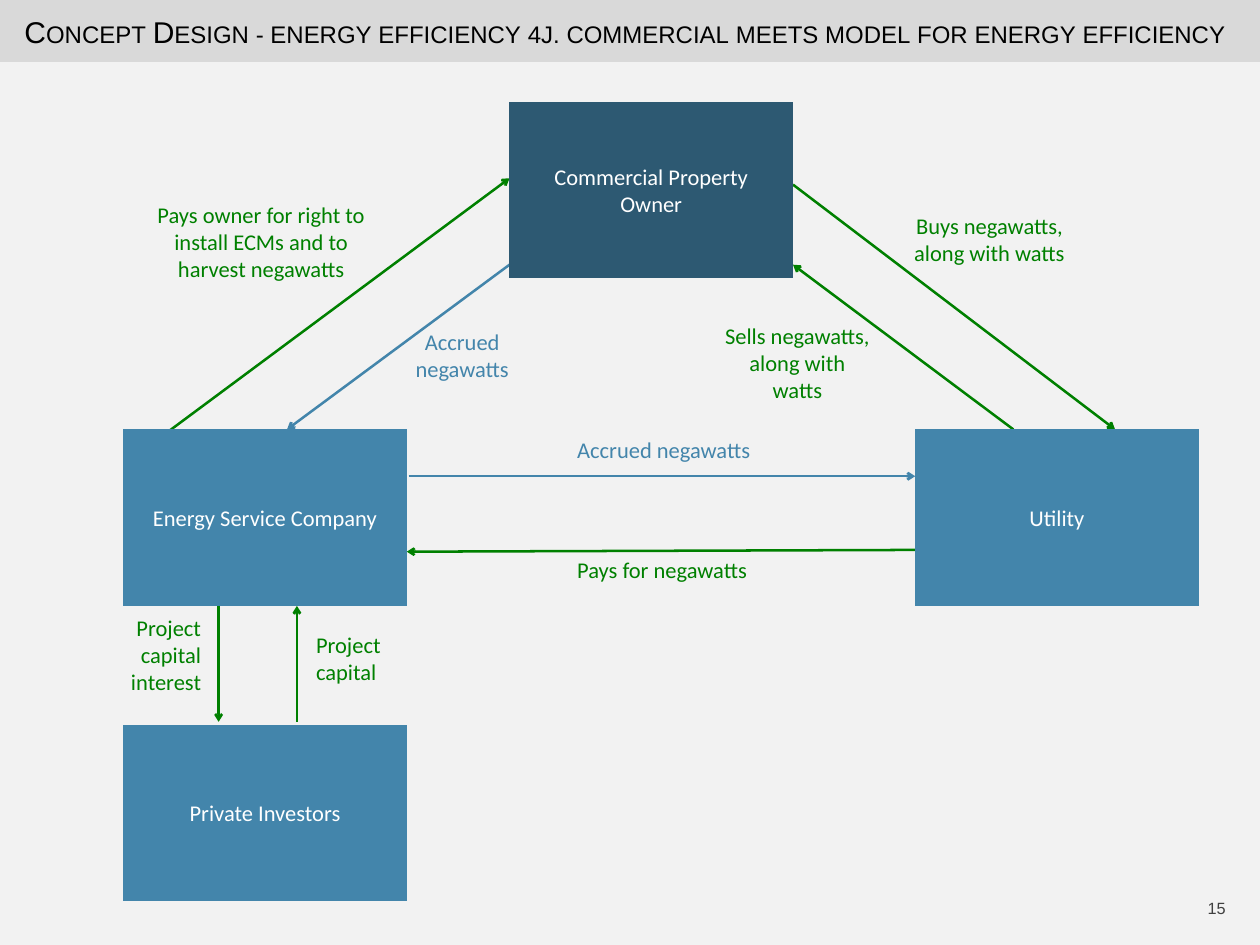
from lxml import etree
from pptx import Presentation
from pptx import util as u
from pptx.dml.color import RGBColor
from pptx.enum import shapes, text
from pptx.oxml import ns

GREEN, BLUE, NAVY = "008000", "4385AB", "2D5972"
BLACK, GREY, BAND, PAPER, WHITE = "000000", "404040", "D9D9D9", "F2F2F2", "FFFFFF"
LEFT, CENTER, RIGHT = text.PP_ALIGN.LEFT, text.PP_ALIGN.CENTER, text.PP_ALIGN.RIGHT
TOP, MIDDLE = text.MSO_ANCHOR.TOP, text.MSO_ANCHOR.MIDDLE


def color(value):
    return RGBColor.from_string(value)


def apply(target, values):
    for name, value in values.items():
        setattr(target, name, value)


class Diagram:
    """Holds the shared style and the current slide."""

    frame_style = {
        "margin_left": u.Cm(0.36), "margin_right": u.Cm(0.36),
        "margin_top": u.Cm(0.18), "margin_bottom": u.Cm(0.18),
        "auto_size": text.MSO_AUTO_SIZE.NONE,
    }

    def __init__(self, deck):
        self.page = deck.slides.add_slide(deck.slide_layouts[5])
        self.page.background.fill.solid()
        self.page.background.fill.fore_color.rgb = color(PAPER)

    def add_text(self, shape, lines, ink, align=CENTER, anchor=MIDDLE,
                 size=18, font="Calibri", wrap=True):
        frame = shape.text_frame
        apply(frame, {**self.frame_style, "vertical_anchor": anchor, "word_wrap": wrap})
        for index, line in enumerate(lines):
            para = frame.add_paragraph() if index else frame.paragraphs[0]
            apply(para, {"alignment": align, "space_before": u.Pt(0)})
            span = para.add_run()
            span.text = line
            apply(span.font, {"name": font, "size": u.Pt(size)})
            span.font.color.rgb = color(ink)

    def title(self, words):
        title = self.page.shapes.title
        band = self.rectangle(shapes.MSO_SHAPE.RECTANGLE, (0, 0, 35.56, 1.75), BAND)
        title.element.addprevious(band.element)
        apply(title, {"left": u.Cm(0.33), "top": u.Cm(0),
                      "width": u.Cm(34.72), "height": u.Cm(1.75)})
        self.add_text(title, [words], BLACK, LEFT, size=24, font="Arial")
        for props in title.element.iter(ns.qn("a:rPr")):
            props.set("cap", "small")

    def rectangle(self, kind, place, fill):
        box = self.page.shapes.add_shape(kind, *map(u.Cm, place))
        box.shadow.inherit = False
        box.fill.solid()
        box.fill.fore_color.rgb = color(fill)
        box.line.fill.background()
        return box

    def party(self, name, left, top, fill=BLUE):
        box = self.rectangle(shapes.MSO_SHAPE.FLOWCHART_PROCESS, (left, top, 8, 4.98), fill)
        self.add_text(box, [name], WHITE)

    def label(self, lines, place, ink=GREEN, align=CENTER, **style):
        box = self.page.shapes.add_textbox(*map(u.Cm, place))
        self.add_text(box, lines, ink, align, TOP, **style)

    def arrow(self, start, end, ink=GREEN):
        link = self.page.shapes.add_connector(
            shapes.MSO_CONNECTOR.STRAIGHT, *map(u.Cm, start + end))
        link.line.width = u.Pt(2)
        link.line.color.rgb = color(ink)
        outline = link.element.spPr.find(ns.qn("a:ln"))
        etree.SubElement(outline, ns.qn("a:tailEnd"), type="arrow")
        etree.SubElement(link.element.spPr, ns.qn("a:effectLst"))


def main():
    deck = Presentation()
    apply(deck, {"slide_width": u.Cm(35.56), "slide_height": u.Cm(26.67)})
    diagram = Diagram(deck)

    # Heading and page number
    diagram.title("Concept Design - energy efficiency 4j. "
                  "commercial meets model for energy efficiency")
    diagram.label(["15"], (33.12, 25.17, 1.83, 0.94), GREY, RIGHT, size=13, font="Arial")

    # Columns and rows of the four parties
    company_x, owner_x, utility_x = 3.48, 14.38, 25.83
    owner_y, middle_y, investor_y = 2.87, 12.12, 20.45
    owner_right, company_right, company_bottom = owner_x + 8, company_x + 8, middle_y + 4.98

    # Flows between the parties
    flows = [
        ((6.17, company_bottom), (6.17, 20.37), GREEN),
        ((8.38, 20.37), (8.38, company_bottom), GREEN),
        ((utility_x, 15.52), (company_right, 15.57), GREEN),
        ((11.53, 13.44), (utility_x, 13.44), BLUE),
        ((3.94, 12.78), (owner_x, 5.03), GREEN),
        ((owner_x, 7.47), (8.1, middle_y), BLUE),
        ((28.6, middle_y), (owner_right, 7.47), GREEN),
        ((owner_right, 5.21), (31.47, middle_y), GREEN),
    ]
    for flow in flows:
        diagram.arrow(*flow)

    # Flow labels
    diagram.label(["Project ", "capital ", "interest "], (0.97, 17.15, 5.21, 2.69), align=RIGHT)
    diagram.label(["Project capital"], (8.56, 17.63, 4.24, 1.9), align=LEFT)
    diagram.label(["Sells negawatts, along with watts"], (20.09, 8.92, 4.83, 2.67))
    diagram.label(["Accrued negawatts"], (15.93, 12.12, 5.72, 1.14), BLUE, LEFT, wrap=False)
    diagram.label(["Pays for negawatts"], (15.93, 15.52, 5.61, 1.14), align=LEFT, wrap=False)
    diagram.label(["Buys negawatts, along with watts"], (24.94, 5.79, 5.97, 1.9))
    diagram.label(["Accrued negawatts"], (11.05, 9.07, 3.99, 1.9), BLUE)
    diagram.label(["Pays owner for right to install ECMs and to harvest negawatts"],
                  (3.84, 5.49, 7.06, 2.69))

    # Parties, in front of the arrows
    diagram.party("Commercial Property Owner", owner_x, owner_y, NAVY)
    diagram.party("Private Investors", company_x, investor_y)
    diagram.party("Energy Service Company", company_x, middle_y)
    diagram.party("Utility", utility_x, middle_y)

    deck.save("out.pptx")


if __name__ == "__main__":
    main()
